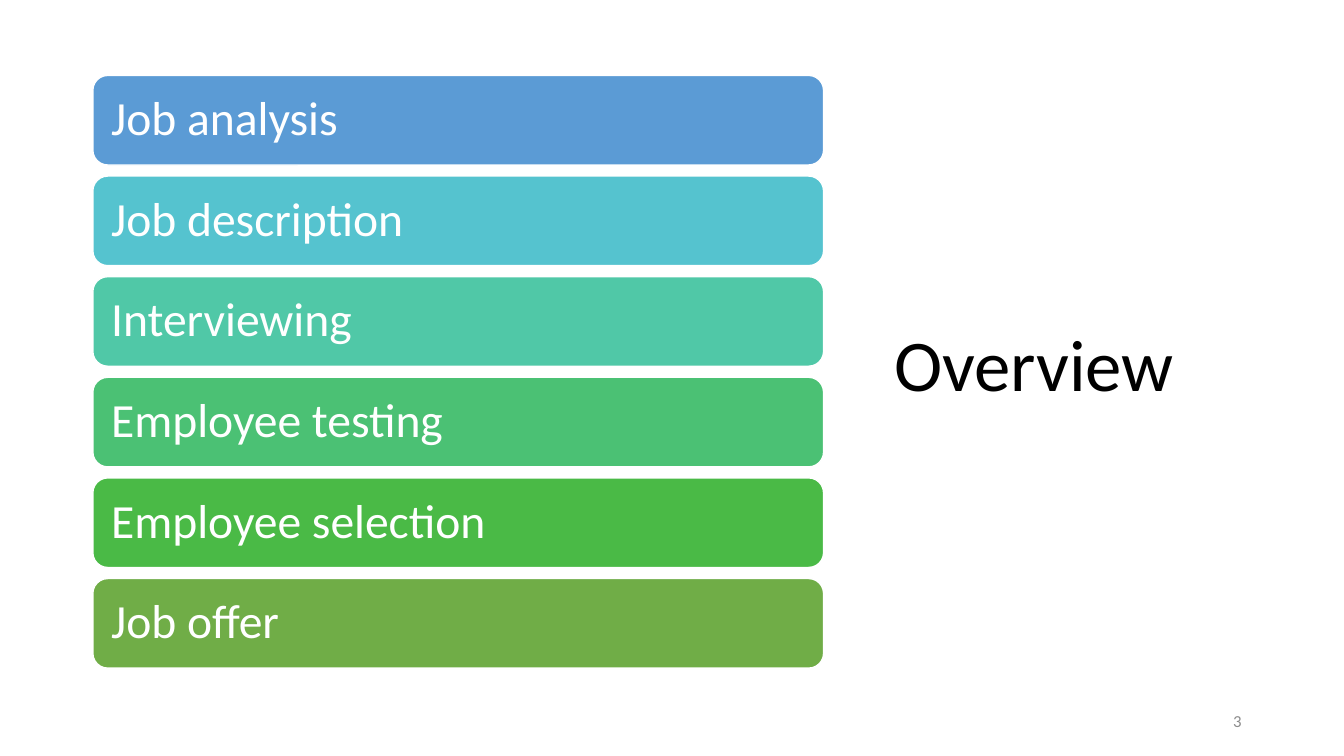
from pptx import Presentation
from pptx.dml.color import RGBColor
from pptx.enum.shapes import MSO_SHAPE as Shape
from pptx.enum.text import MSO_ANCHOR as Anchor, PP_ALIGN as Align
from pptx.util import Pt

TITLE = "Overview"
PAGE_NUMBER = "3"
TOPICS = [
    ("Job analysis", "5B9BD5"),
    ("Job description", "55C3CF"),
    ("Interviewing", "50C8A7"),
    ("Employee testing", "4BC174"),
    ("Employee selection", "4ABA46"),
    ("Job offer", "70AD47"),
]
FONT = "Calibri"
BAR_LEFT, BAR_TOP, BAR_WIDTH, BAR_HEIGHT = 66.3, 53.9, 522, 64
BAR_STEP = 71.87
BAR_INSET = 10


def color(value):
    return RGBColor.from_string(value)


def write(shape, text, size, text_color, align=Align.LEFT, line_spacing=0.9):
    frame = shape.text_frame
    frame.word_wrap = True
    frame.vertical_anchor = Anchor.MIDDLE
    paragraph = frame.paragraphs[0]
    paragraph.text = text
    paragraph.alignment = align
    paragraph.line_spacing = line_spacing
    paragraph.font.name = FONT
    paragraph.font.size = Pt(size)
    paragraph.font.color.rgb = color(text_color)


def add_bar(slide, top, text, fill):
    bar = slide.shapes.add_shape(
        Shape.ROUNDED_RECTANGLE, Pt(BAR_LEFT), Pt(top), Pt(BAR_WIDTH), Pt(BAR_HEIGHT))
    bar.shadow.inherit = False
    bar.fill.solid()
    bar.fill.fore_color.rgb = color(fill)
    bar.line.color.rgb = color("FFFFFF")
    bar.line.width = Pt(1)
    frame = bar.text_frame
    frame.margin_left = frame.margin_right = Pt(BAR_INSET)
    frame.margin_top = frame.margin_bottom = Pt(BAR_INSET)
    write(bar, text, 34, "FFFFFF")


def main():
    presentation = Presentation()
    presentation.slide_width, presentation.slide_height = Pt(960), Pt(540)
    slide = presentation.slides.add_slide(presentation.slide_layouts[6])

    title = slide.shapes.add_textbox(Pt(631.5), Pt(43.2), Pt(262.8), Pt(439.2))
    write(title, TITLE, 52, "000000")

    number = slide.shapes.add_textbox(Pt(678), Pt(500.5), Pt(216), Pt(28.75))
    write(number, PAGE_NUMBER, 12, "8C8C8C", Align.RIGHT, 1.0)

    for index, (topic, fill) in enumerate(TOPICS):
        add_bar(slide, BAR_TOP + index * BAR_STEP, topic, fill)

    presentation.save("out.pptx")


if __name__ == "__main__":
    main()
